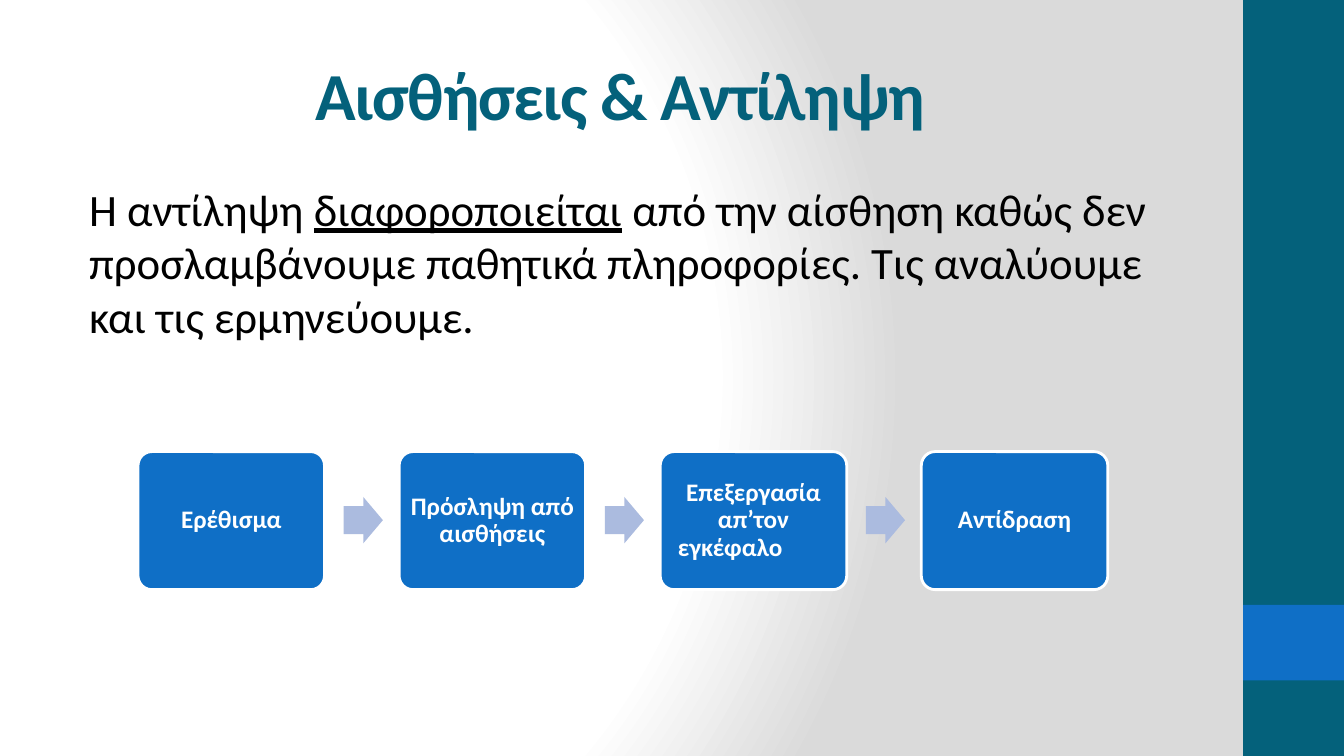
"""Build the slide on senses and perception."""
import pptx
import pptx.dml.color
import pptx.enum.shapes
import pptx.enum.text
import pptx.oxml
import pptx.util

Pt = pptx.util.Pt
SHAPE = pptx.enum.shapes.MSO_SHAPE
ALIGN = pptx.enum.text.PP_ALIGN
ANCHOR = pptx.enum.text.MSO_ANCHOR
TEAL, BLUE, PALE, WHITE, BLACK = "04617B", "0F6FC6", "ABBBDF", "FFFFFF", "000000"
GRADIENT = [(0, WHITE), (75, WHITE), (100, "DADADA")]
STEPS = ["Ερέθισμα", "Πρόσληψη από αισθήσεις", "Επεξεργασία απ’τον εγκέφαλο\t", "Αντίδραση"]


def rgb(value):
    """Turn a hex string into a colour."""
    return pptx.dml.color.RGBColor.from_string(value)


def apply(target, formats):
    """Set every attribute named in a dict of format values."""
    for name, value in formats.items():
        setattr(target, name, value)


class Deck:
    """Hold the style and the current slide."""

    font = "Calibri"

    def __init__(self, width, height):
        """Open a presentation with one title-only slide."""
        self.prs = pptx.Presentation()
        apply(self.prs, {"slide_width": Pt(width), "slide_height": Pt(height)})
        self.s = self.prs.slides.add_slide(self.prs.slide_layouts[5])

    def background(self, stops):
        """Fill the background with a circular gradient."""
        fill = self.s.background.fill
        fill.solid()
        solid = self.s.background._cSld.bg.bgPr[0]
        marks = "".join(f'<a:gs pos="{pos * 1000}"><a:srgbClr val="{color}"/></a:gs>' for pos, color in stops)
        grad = pptx.oxml.parse_xml(
            '<a:gradFill xmlns:a="http://schemas.openxmlformats.org/drawingml/2006/main" rotWithShape="1">'
            f'<a:gsLst>{marks}</a:gsLst><a:path path="circle">'
            '<a:fillToRect l="20000" t="50000" r="100000" b="50000"/></a:path></a:gradFill>')
        solid.getparent().replace(solid, grad)

    def text(self, tf, runs, size, color, bold=False, frame=None, para=None):
        """Write one paragraph of (text, underline) runs and return it."""
        apply(tf, {"word_wrap": True, **(frame or {})})
        p = tf.paragraphs[0]
        apply(p, para or {})
        for words, underline in runs:
            r = p.add_run()
            r.text = words
            apply(r.font, {"name": self.font, "size": Pt(size), "bold": bold, "underline": underline})
            r.font.color.rgb = rgb(color)
        return p

    def title(self, box, words):
        """Place and format the title placeholder."""
        sp = self.s.shapes.title
        apply(sp, dict(zip(("left", "top", "width", "height"), map(Pt, box))))
        p = self.text(sp.text_frame, [(words, False)], 48, TEAL, True,
                      {"vertical_anchor": ANCHOR.MIDDLE}, {"alignment": ALIGN.CENTER})
        p.runs[0].font._element.set("spc", "-100")

    def body(self, box, runs):
        """Add the body text with a small left indent."""
        sp = self.s.shapes.add_textbox(*map(Pt, box))
        p = self.text(sp.text_frame, runs, 32, BLACK, para={"space_before": Pt(6.4)})
        p._p.get_or_add_pPr().set("marL", str(Pt(8.64)))

    def shape(self, kind, box, fill, line=None, adjust=()):
        """Add a filled preset shape."""
        sp = self.s.shapes.add_shape(kind, *map(Pt, box))
        sp.shadow.inherit = False
        sp.fill.solid()
        sp.fill.fore_color.rgb = rgb(fill)
        if line:
            sp.line.color.rgb = rgb(line)
            sp.line.width = Pt(2)
        else:
            sp.line.fill.background()
        for i, value in enumerate(adjust):
            sp.adjustments[i] = value
        return sp

    def step(self, box, words):
        """Add one rounded box of the process."""
        sp = self.shape(SHAPE.ROUNDED_RECTANGLE, box, BLUE, WHITE, [0.1])
        frame = dict.fromkeys(("margin_left", "margin_top", "margin_right", "margin_bottom"), Pt(5))
        self.text(sp.text_frame, [(words, False)], 18, WHITE, True,
                  {"vertical_anchor": ANCHOR.MIDDLE, **frame},
                  {"alignment": ALIGN.CENTER, "line_spacing": 0.9})

    def process(self, left, top, pitch, steps):
        """Lay out the steps in a row with arrows between them."""
        for i, words in enumerate(steps):
            x = left + i * pitch
            if i:
                self.shape(SHAPE.RIGHT_ARROW, (x - 39.6, top + 32.4, 28, 33.1), PALE, adjust=[0.6, 0.5])
            self.step((x, top, 133.2, 98.6), words)


def main():
    """Build and save the slide."""
    deck = Deck(960, 540)
    deck.background(GRADIENT)
    deck.shape(SHAPE.RECTANGLE, (888, 0, 72, 540), TEAL)
    deck.shape(SHAPE.RECTANGLE, (888, 432, 72, 54), BLUE)
    deck.title((48, 21.6, 800, 90), "Αισθήσεις & Αντίληψη ")
    deck.body((48, 126, 800, 378), [
        ("Η αντίληψη ", False),
        ("διαφοροποιείται", True),
        (" από την αίσθηση καθώς δεν προσλαμβάνουμε παθητικά πληροφορίες. "
         "Τις αναλύουμε και τις ερμηνεύουμε.", False)])
    deck.process(98.6, 322.6, 186.5, STEPS)
    deck.prs.save("out.pptx")


if __name__ == "__main__":
    main()
